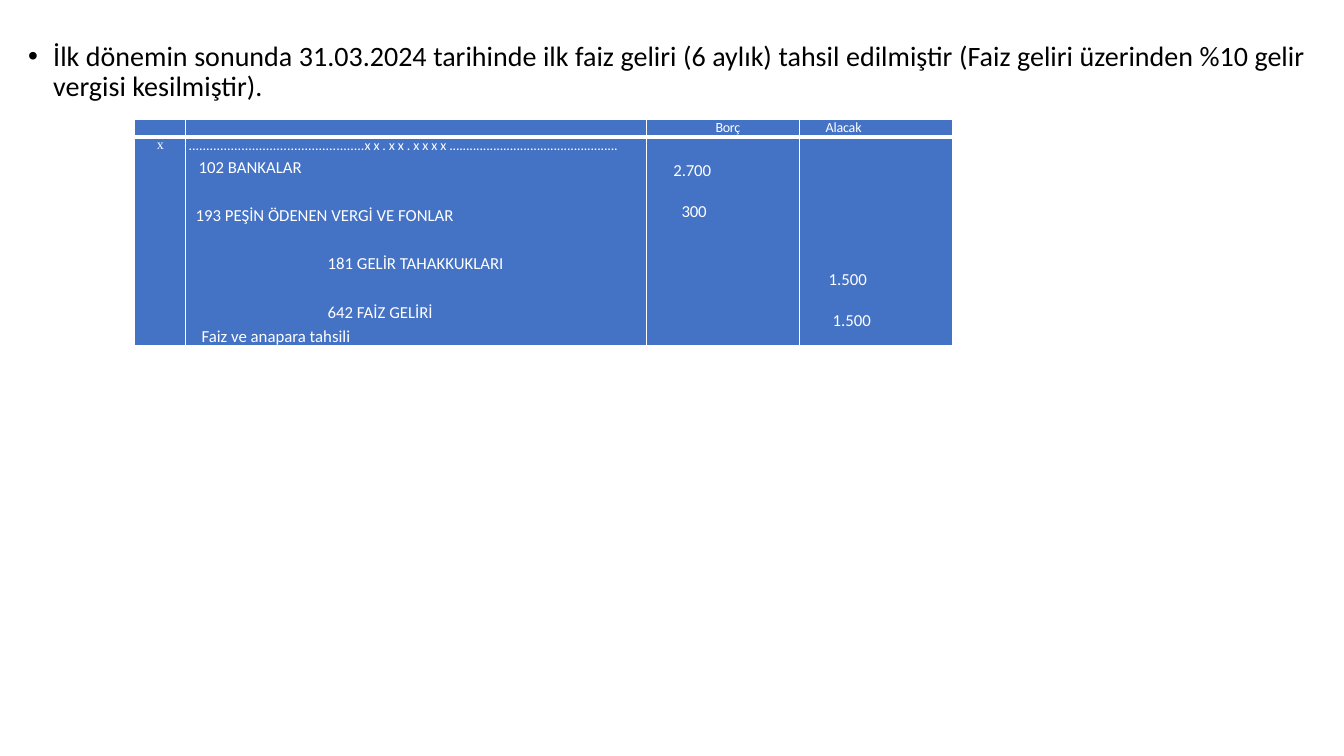
from pptx import Presentation
from pptx import util as u
from pptx.dml.color import RGBColor
from pptx.enum import text
from pptx.oxml import parse_xml
from pptx.oxml.ns import nsdecls

CENTER = text.PP_ALIGN.CENTER


def color(code):
    return RGBColor.from_string(code)


def write(frame, runs, size=12, ink="FFFFFF", face="Calibri", left=0, hang=0,
          gap=0, align=None, line=None, bullet=None):
    para = frame.paragraphs[0]
    if para.runs:
        para = frame.add_paragraph()
    props = para._p.get_or_add_pPr()
    props.set("marL", str(u.Inches(left)))
    props.set("indent", str(u.Inches(hang)))
    if bullet:
        props.append(parse_xml(f'<a:buFont {nsdecls("a")} typeface="Arial"/>'))
        props.append(parse_xml(f'<a:buChar {nsdecls("a")} char="{bullet}"/>'))
    if gap:
        para.space_before = u.Pt(gap)
    if line:
        para.line_spacing = line
    para.alignment = align
    for words, track in runs:
        run = para.add_run()
        run.text = words
        run.font.size = u.Pt(size)
        run.font.name = face
        run.font.color.rgb = color(ink)
        run._r.get_or_add_rPr().set("spc", str(round(track * 100)))


deck = Presentation()
deck.slide_width = u.Inches(13.33)
deck.slide_height = u.Inches(7.5)
slide = deck.slides.add_slide(deck.slide_layouts[6])

body = slide.shapes.add_textbox(
    u.Inches(0.18), u.Inches(0.37), u.Inches(12.87), u.Inches(6.65)).text_frame
body.word_wrap = True
write(body, [("İlk dönemin sonunda 31.03.2024 tarihinde ilk faiz geliri (6 aylık) tahsil "
              "edilmiştir (Faiz geliri üzerinden %10 gelir vergisi kesilmiştir).", 0)],
      size=20, ink="000000", left=0.25, hang=-0.25, line=0.9,
      align=text.PP_ALIGN.JUSTIFY, bullet="•")

table = slide.shapes.add_table(
    2, 4, u.Inches(1.33), u.Inches(1.18), u.Inches(8.12), u.Inches(2.27)).table
table.first_row = table.horz_banding = False
for col, width in zip(table.columns, (0.51, 4.57, 1.52, 1.52)):
    col.width = u.Inches(width)
for row, height in zip(table.rows, (0.18, 2.07)):
    row.height = u.Inches(height)

for r, row in enumerate(table.rows):
    for cell in row.cells:
        cell.margin_left = cell.margin_right = 0
        cell.margin_top = cell.margin_bottom = 0
        cell.fill.solid()
        cell.fill.fore_color.rgb = color("4472C4")
        edges = (("L", 1), ("R", 1), ("T", 3 if r else 1), ("B", 1 if r else 3))
        for spot, (side, thick) in enumerate(edges):
            cell._tc.get_or_add_tcPr().insert(spot, parse_xml(
                f'<a:ln{side} {nsdecls("a")} w="{u.Pt(thick)}"><a:solidFill>'
                f'<a:srgbClr val="FFFFFF"/></a:solidFill></a:ln{side}>'))

for c in (0, 1):
    table.cell(0, c).text_frame.paragraphs[0]._p.append(
        parse_xml(f'<a:endParaRPr {nsdecls("a")} sz="1000"/>'))
write(table.cell(0, 2).text_frame, [("Borç", -0.2)], size=10, left=0.1, align=CENTER)
write(table.cell(0, 3).text_frame, [("Alacak", -0.1)], size=10, left=0.26)

mark, entry, debit, credit = table.rows[1].cells
write(mark.text_frame, [("x", -0.5)], size=10, face="Times New Roman",
      left=0.01, align=CENTER)

dots = "." * 50
write(entry.text_frame, [(dots, 0), ("xx.xx.xxxx", 2.1), (dots, -0.1)],
      size=10, left=0.03)
for words, left, gap in (
        ("102 BANKALAR", 0.13, 2.5),
        ("193 PEŞİN ÖDENEN VERGİ VE FONLAR", 0.1, 19.7),
        ("181 GELİR TAHAKKUKLARI", 1.41, 19.7),
        ("642 FAİZ GELİRİ", 1.41, 20),
        ("Faiz ve anapara tahsili", 0.16, 3)):
    write(entry.text_frame, [(words, 0)], left=left, gap=gap)

for cell, top, sums in (
        (debit, 0.23, (("2.700", 0.27, -0.1), ("300", 0.35, -0.1))),
        (credit, 1.31, (("1.500", 0.29, 0), ("1.500", 0.33, 0)))):
    cell.margin_top = u.Inches(top)
    for n, (words, left, track) in enumerate(sums):
        write(cell.text_frame, [(words, track)], left=left, gap=14.65 * n)

deck.save("out.pptx")
